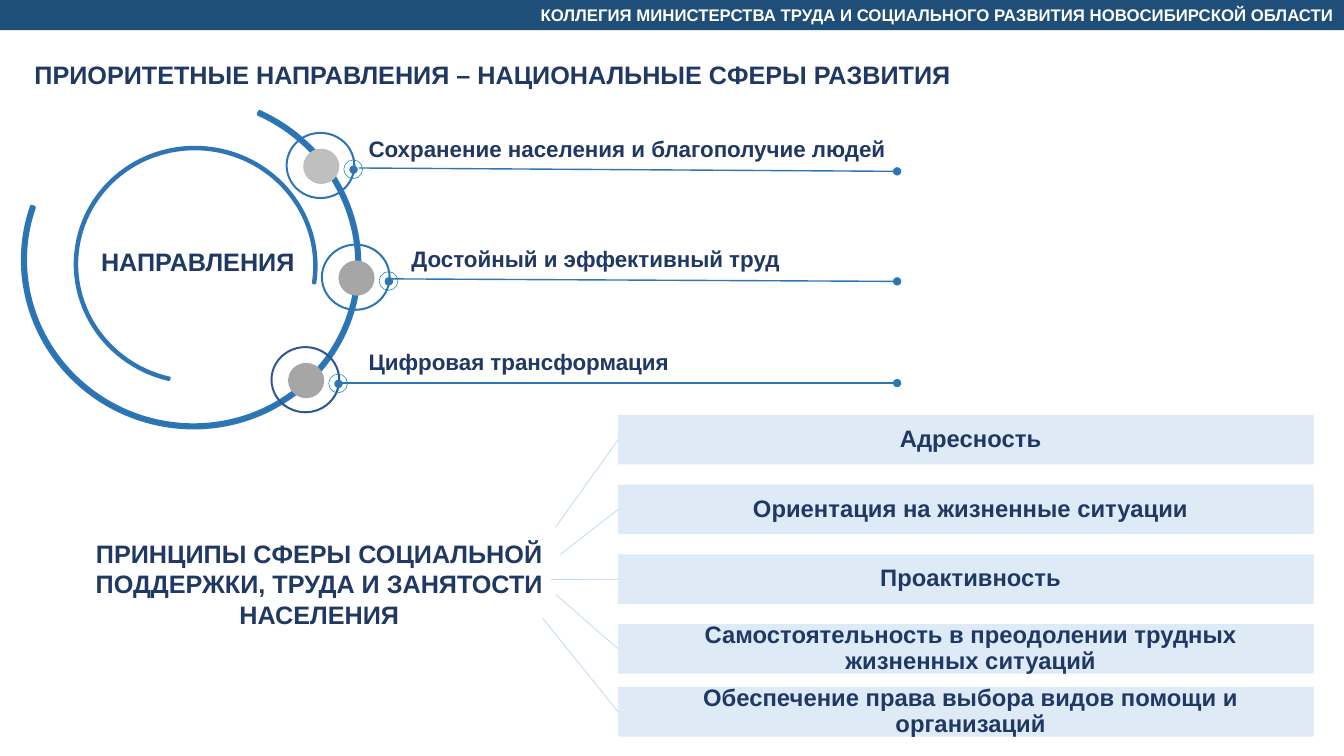
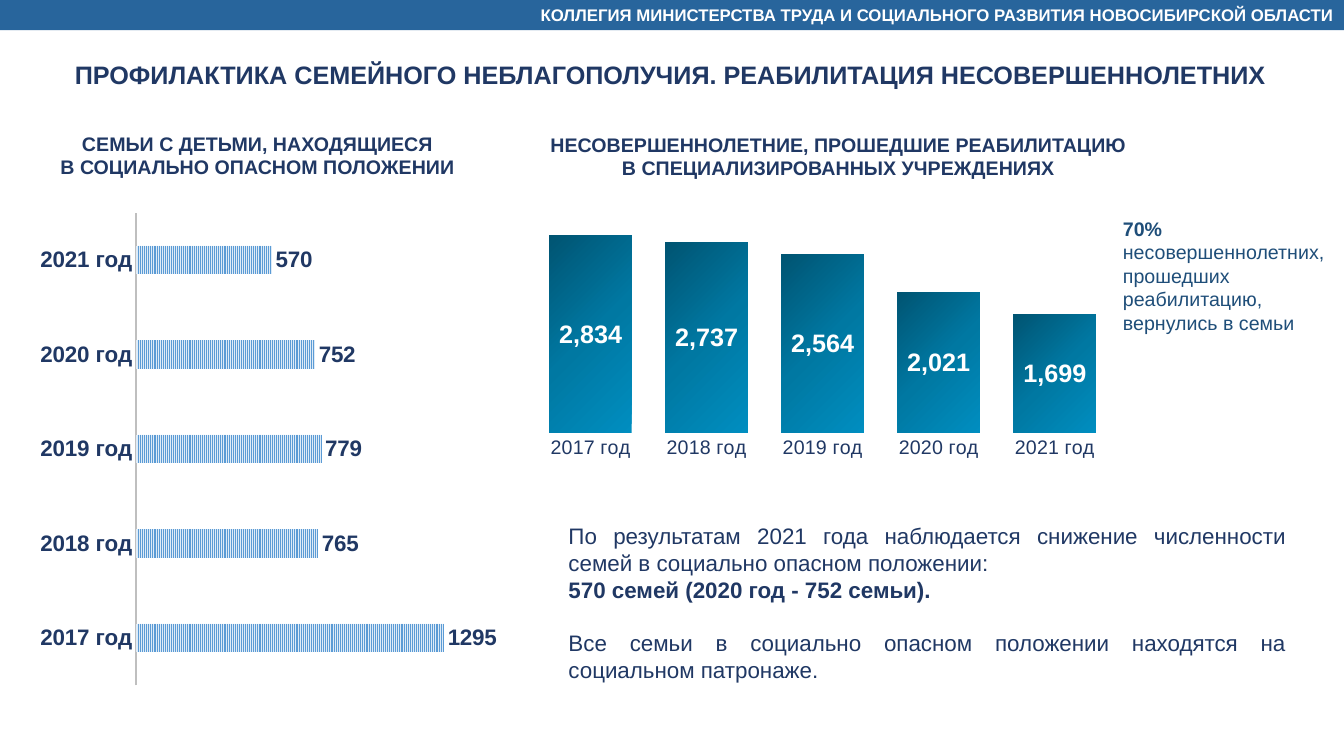
from dataclasses import dataclass
from typing import Any, NamedTuple, Optional

from pptx import Presentation
from pptx import util as u
from pptx.chart.data import CategoryChartData
from pptx.dml.color import RGBColor
from pptx.enum import chart as charts
from pptx.enum import dml, shapes, text
from pptx.oxml import parse_xml
from pptx.oxml.ns import nsdecls, qn

COLS, ROWS = 160, 90
CELL = u.Inches(7.5) // ROWS
FONT = "Arial"
COLORS = {
    "navy": "203864", "deep": "1F4E79", "band": "28659C", "blue": "2E75B6",
    "indigo": "2F5597", "teal": "0079A4", "cyan": "008BBC", "sky": "BDD7EE",
    "pale": "DEEBF7", "stripe": "5B9BD5", "silver": "BFBFBF", "grey": "A6A6A6",
    "white": "FFFFFF", "grad_0": "005472", "grad_50": "0078A2", "grad_100": "008EC0",
}
BAND_TEXT = "КОЛЛЕГИЯ МИНИСТЕРСТВА ТРУДА И СОЦИАЛЬНОГО РАЗВИТИЯ НОВОСИБИРСКОЙ ОБЛАСТИ"
YEARS = [f"{year} год" for year in range(2017, 2022)]
LEFT, CENTER = text.PP_ALIGN.LEFT, text.PP_ALIGN.CENTER
RIGHT, JUSTIFY = text.PP_ALIGN.RIGHT, text.PP_ALIGN.JUSTIFY
SHAPE = shapes.MSO_SHAPE


class Box(NamedTuple):
    """Place and size in grid columns and rows."""
    x: float
    y: float
    w: float
    h: float

    def emu(self) -> list:
        return [cells(v) for v in self]


class Run(NamedTuple):
    words: str
    bold: bool = True


@dataclass
class Arc:
    box: Box
    turn: float
    adjustments: tuple
    fill: str
    width: float


@dataclass
class Direction:
    label: str
    label_box: Box
    ring: tuple
    ring_color: str
    core_color: str
    line_start: tuple
    line_end_row: float


@dataclass
class Principle:
    label: str
    row: float
    fan_end: tuple


@dataclass
class ChartLook:
    box: Box
    kind: Any
    name: str
    values: tuple
    plot: tuple
    top: int
    bars: dict
    axis_font: tuple
    label_font: tuple
    label_format: dict
    axis_line: Optional[str] = None


ARCS = [
    Arc(Box(2.6, 11.5, 40.3, 39.4), 199.5, (56.92, 215.88, 0.01), "teal", 2),
    Arc(Box(8.9, 17.5, 28.8, 28.1), 8.1, (56.92, 0.43, 0.01), "cyan", 1.5),
]
DIRECTIONS = [
    Direction("Сохранение населения и благополучие людей", Box(42.7, 15.5, 67.4, 4.9),
              (34, 15.7), "blue", "silver", (42.7, 20), 20.4),
    Direction("Достойный и эффективный труд", Box(47.8, 28.6, 51.5, 4.9),
              (38.2, 29), "blue", "grey", (46.2, 33.2), 33.5),
    Direction("Цифровая трансформация", Box(42.7, 40.8, 51.5, 4.9),
              (32.2, 41.2), "indigo", "grey", (40.6, 45.6), 45.6),
]
PRINCIPLES = [
    Principle("Адресность", 49.4, (66.1, 62.8)),
    Principle("Ориентация на жизненные ситуации", 57.7, (66.7, 66)),
    Principle("Проактивность", 66, (65.6, 69)),
    Principle("Самостоятельность в преодолении трудных жизненных ситуаций", 74.3, (66.2, 70.8)),
    Principle("Обеспечение права выбора видов помощи и организаций", 81.8, (64.6, 73.6)),
]
FAMILIES = ChartLook(
    Box(0, 25.2, 64.9, 64.8), charts.XL_CHART_TYPE.BAR_CLUSTERED, "Семьи",
    (1295, 765, 779, 752, 570), (0.25, 0, 0.61, 0.87), 1400,
    {"gap_width": 227, "overlap": -48}, (16, "navy", True), (16, "navy", True),
    {"position": charts.XL_LABEL_POSITION.OUTSIDE_END}, "silver")
MINORS = ChartLook(
    Box(63.4, 26.4, 75.1, 29.9), charts.XL_CHART_TYPE.COLUMN_CLUSTERED, "Несовершеннолетние",
    (2834, 2737, 2564, 2021, 1699), (0, 0.01, 0.92, 0.83), 3000,
    {"gap_width": 41}, (14, "navy", False), (18, "white", True),
    {"position": charts.XL_LABEL_POSITION.CENTER, "number_format": "#,##0",
     "number_format_is_linked": False})


def cells(count: float) -> int:
    return u.Emu(round(count * CELL))


def rgb(name: str) -> RGBColor:
    return RGBColor.from_string(COLORS[name])


def put(obj: Any, values: dict) -> None:
    for key, value in values.items():
        setattr(obj, key, value)


def set_font(font: Any, size: float, color: str, bold: bool) -> None:
    put(font, {"name": FONT, "size": u.Pt(size), "bold": bold})
    font.color.rgb = rgb(color)


def write(tf: Any, paragraphs: list, size: float, color: str = "navy", align: Any = LEFT,
          anchor: Any = text.MSO_ANCHOR.TOP, **spacing: Any) -> None:
    """Fill a text frame; each paragraph is a list of runs."""
    put(tf, {"word_wrap": True, "auto_size": text.MSO_AUTO_SIZE.NONE,
             "vertical_anchor": anchor})
    for i, runs in enumerate(paragraphs):
        p = tf.paragraphs[0] if i == 0 else tf.add_paragraph()
        put(p, {"alignment": align, **spacing})
        for run in runs:
            r = p.add_run()
            r.text = run.words
            set_font(r.font, size, color, run.bold)


def add_text(slide: Any, box: Box, paragraphs: list, size: float, **look: Any) -> Any:
    tf = slide.shapes.add_textbox(*box.emu()).text_frame
    write(tf, paragraphs, size, **look)
    return tf


def add_figure(slide: Any, kind: Any, box: Box, fill: str, line: Optional[str] = None,
               width: float = 1, adjustments: tuple = ()) -> Any:
    sp = slide.shapes.add_shape(kind, *box.emu())
    sp.shadow.inherit = False
    sp.fill.solid()
    sp.fill.fore_color.rgb = rgb(fill)
    if line:
        sp.line.color.rgb = rgb(line)
        sp.line.width = u.Pt(width)
    else:
        sp.line.fill.background()
    for i, value in enumerate(adjustments):
        sp.adjustments[i] = value
    return sp


def add_line(slide: Any, start: tuple, end: tuple, color: str, width: float,
             dot: bool = False) -> Any:
    """Draw a straight line, with a round end if dot is set."""
    c = slide.shapes.add_connector(shapes.MSO_CONNECTOR.STRAIGHT,
                                   *[cells(v) for v in (*start, *end)])
    c.line.color.rgb = rgb(color)
    c.line.width = u.Pt(width)
    sp_pr = c._element.spPr
    if dot:
        sp_pr.find(qn("a:ln")).append(parse_xml(f'<a:tailEnd {nsdecls("a")} type="oval"/>'))
    sp_pr.append(parse_xml(f'<a:effectLst {nsdecls("a")}/>'))
    return c


def new_slide(prs: Any, title: str, title_box: Box, band_color: str) -> Any:
    slide = prs.slides.add_slide(prs.slide_layouts[5])
    band = add_figure(slide, SHAPE.RECTANGLE, Box(0, 0, COLS, 3.6), band_color)
    write(band.text_frame, [[Run(BAND_TEXT)]], 12, "white", RIGHT, text.MSO_ANCHOR.MIDDLE)
    sp = slide.shapes.title
    put(sp, dict(zip(("left", "top", "width", "height"), title_box.emu())))
    write(sp.text_frame, [[Run(title)]], 18)
    return slide


def add_direction(slide: Any, d: Direction) -> None:
    x, y = d.ring
    add_line(slide, d.line_start, (106.8, d.line_end_row), "blue", 1, dot=True)
    add_figure(slide, SHAPE.DONUT, Box(x, y, 8.3, 8), d.ring_color, adjustments=(0.03,))
    add_figure(slide, SHAPE.DONUT, Box(x + 6.9, y + 3.3, 2.3, 2.3), "cyan", adjustments=(0.03,))
    add_figure(slide, SHAPE.OVAL, Box(x + 7.6, y + 4, 1, 1), "blue")
    add_figure(slide, SHAPE.OVAL, Box(x + 2.1, y + 2, 4.3, 4.2), d.core_color)
    add_text(slide, d.label_box, [[Run(d.label)]], 16)


def add_principle(slide: Any, item: Principle) -> None:
    """Draw a bar with its label and the fan line that leads to it."""
    box = Box(73.6, item.row, 82.8, 5.9)
    bar = add_figure(slide, SHAPE.RECTANGLE, box, "pale")
    put(bar.text_frame, {"margin_left": cells(4.2), "margin_right": cells(3.1),
                         "margin_top": cells(0.5), "margin_bottom": cells(0.5)})
    write(bar.text_frame, [[Run(item.label)]], 17, align=CENTER,
          anchor=text.MSO_ANCHOR.MIDDLE, line_spacing=0.9)
    line = add_line(slide, (box.x, box.y + box.h / 2), item.fan_end, "sky", 0.5)
    line.begin_connect(bar, 1)


def place_plot(chart: Any, plot: tuple) -> None:
    """Fix the inner plot area at shares of the chart's size."""
    area = chart._chartSpace.chart.plotArea
    for old in area.findall(qn("c:layout")):
        area.remove(old)
    shares = "".join(f'<c:{tag} val="{v}"/>' for tag, v in zip("xywh", plot))
    area.insert(0, parse_xml(
        f'<c:layout {nsdecls("c")}><c:manualLayout><c:layoutTarget val="inner"/>'
        f'<c:xMode val="edge"/><c:yMode val="edge"/>{shares}</c:manualLayout></c:layout>'))


def add_bars(slide: Any, look: ChartLook) -> Any:
    """Add a chart and return its only series."""
    data = CategoryChartData()
    data.categories = YEARS
    data.add_series(look.name, look.values)
    chart = slide.shapes.add_chart(look.kind, *look.box.emu(), data).chart
    put(chart, {"has_title": False, "has_legend": False})
    set_font(chart.font, *look.axis_font)
    place_plot(chart, look.plot)
    put(chart.value_axis, {"minimum_scale": 0, "maximum_scale": look.top,
                           "has_major_gridlines": False, "visible": False})
    axis = chart.category_axis
    axis.major_tick_mark = charts.XL_TICK_MARK.NONE
    set_font(axis.tick_labels.font, *look.axis_font)
    if look.axis_line:
        axis.format.line.color.rgb = rgb(look.axis_line)
        axis.format.line.width = u.Pt(1.5)
    else:
        axis.format.line.fill.background()
    plot = chart.plots[0]
    put(plot, {"vary_by_categories": False, "has_data_labels": True, **look.bars})
    put(plot.data_labels, {"show_value": True, **look.label_format})
    set_font(plot.data_labels.font, *look.label_font)
    return plot.series[0]


def fill_stripes(series: Any) -> None:
    fill = series.format.fill
    fill.patterned()
    fill.pattern = dml.MSO_PATTERN.NARROW_VERTICAL
    fill.fore_color.rgb = rgb("stripe")
    fill.back_color.rgb = rgb("pale")


def fill_glow(series: Any) -> None:
    """Fill with a gradient that spreads from the top left corner."""
    stops = "".join(f'<a:gs pos="{pos}000"><a:srgbClr val="{COLORS[f"grad_{pos}"]}"/></a:gs>'
                    for pos in (0, 50, 100))
    series._element.get_or_add_spPr().insert(0, parse_xml(
        f'<a:gradFill {nsdecls("a")} rotWithShape="1"><a:gsLst>{stops}</a:gsLst>'
        '<a:path path="circle"><a:fillToRect r="100000" b="100000"/></a:path></a:gradFill>'))


def directions_slide(prs: Any) -> None:
    slide = new_slide(prs, "ПРИОРИТЕТНЫЕ НАПРАВЛЕНИЯ – НАЦИОНАЛЬНЫЕ СФЕРЫ РАЗВИТИЯ",
                      Box(2.9, 6.4, 129.8, 4.8), "deep")
    for arc in ARCS:
        sp = add_figure(slide, SHAPE.BLOCK_ARC, arc.box, arc.fill, "blue", arc.width,
                        arc.adjustments)
        sp.rotation = arc.turn
    for direction in DIRECTIONS:
        add_direction(slide, direction)
    add_text(slide, Box(8.6, 28.7, 29.9, 9.4), [[Run("НАПРАВЛЕНИЯ")]], 18, align=CENTER)
    add_text(slide, Box(1.2, 63.5, 73.6, 12.1),
             [[Run("ПРИНЦИПЫ СФЕРЫ СОЦИАЛЬНОЙ ПОДДЕРЖКИ, ТРУДА И ЗАНЯТОСТИ НАСЕЛЕНИЯ")]],
             18, align=CENTER)
    for principle in PRINCIPLES:
        add_principle(slide, principle)


def families_slide(prs: Any) -> None:
    slide = new_slide(
        prs, "ПРОФИЛАКТИКА СЕМЕЙНОГО НЕБЛАГОПОЛУЧИЯ. РЕАБИЛИТАЦИЯ НЕСОВЕРШЕННОЛЕТНИХ",
        Box(7.7, 6.5, 146.6, 4.8), "band")
    fill_stripes(add_bars(slide, FAMILIES))
    fill_glow(add_bars(slide, MINORS))
    headings = {
        Box(0, 15.1, 61.3, 6.8): ("СЕМЬИ С ДЕТЬМИ, НАХОДЯЩИЕСЯ",
                                  "В СОЦИАЛЬНО ОПАСНОМ ПОЛОЖЕНИИ"),
        Box(58.6, 15.2, 82.4, 6.8): ("НЕСОВЕРШЕННОЛЕТНИЕ, ПРОШЕДШИЕ РЕАБИЛИТАЦИЮ",
                                     "В СПЕЦИАЛИЗИРОВАННЫХ УЧРЕЖДЕНИЯХ"),
    }
    for box, lines in headings.items():
        add_text(slide, box, [[Run(line)] for line in lines], 14, align=CENTER)
    summary = add_text(slide, Box(66.5, 61.6, 87.8, 20.6), [
        [Run("По результатам 2021 года наблюдается снижение численности семей "
             "в социально опасном положении:", False)],
        [Run("570 семей (2020 год - 752 семьи).")],
        [Run("Все семьи в социально опасном положении находятся на социальном патронаже.",
             False)],
    ], 16, align=JUSTIFY)
    summary.paragraphs[-1].space_before = u.Pt(19)
    add_text(slide, Box(132.5, 25.2, 27.5, 15.4), [
        [Run("70% "), Run("несовершеннолетних, прошедших реабилитацию, вернулись в семьи", False)],
    ], 14, color="deep")


def main() -> None:
    prs = Presentation()
    put(prs, {"slide_width": cells(COLS), "slide_height": cells(ROWS)})
    directions_slide(prs)
    families_slide(prs)
    prs.save("out.pptx")


if __name__ == "__main__":
    main()
